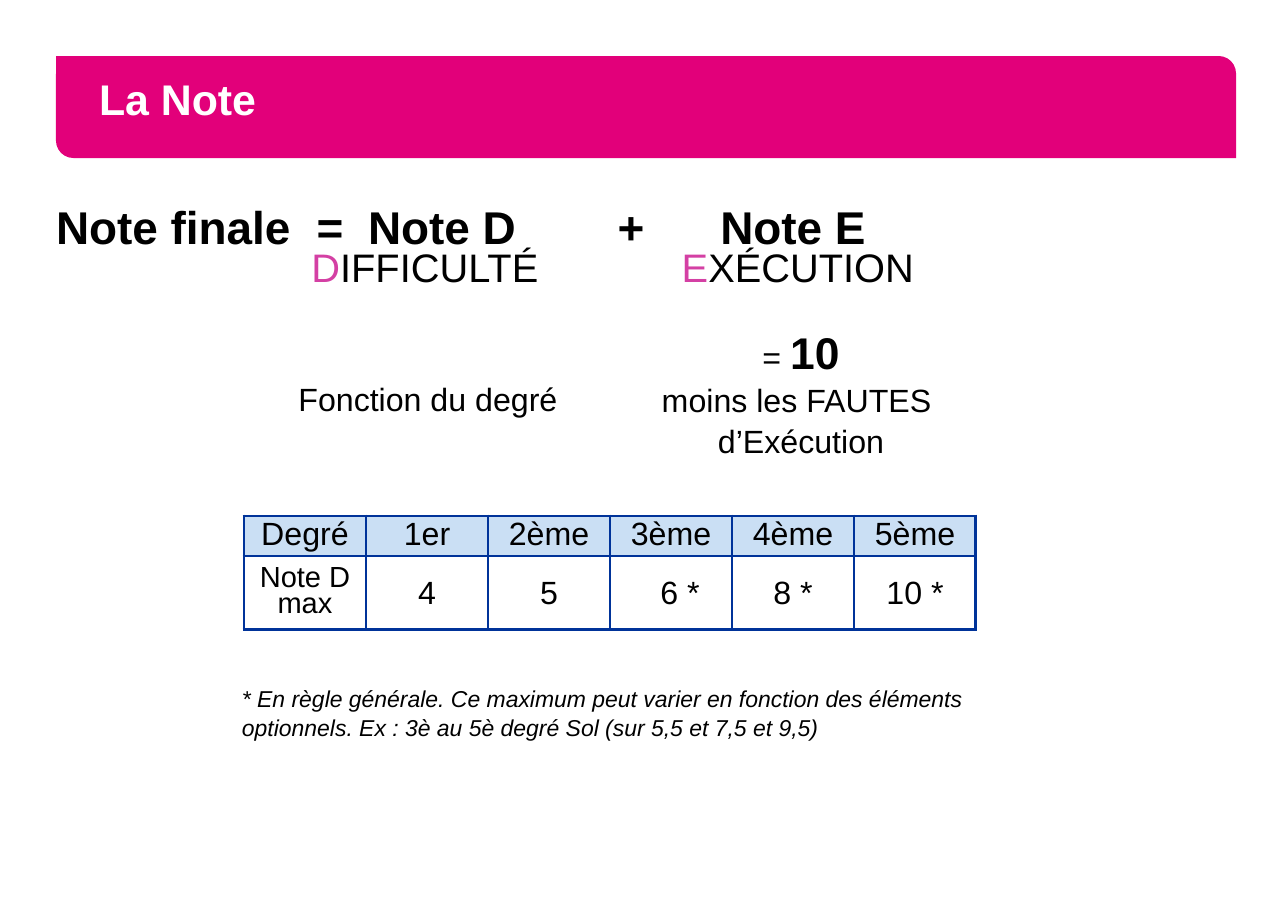
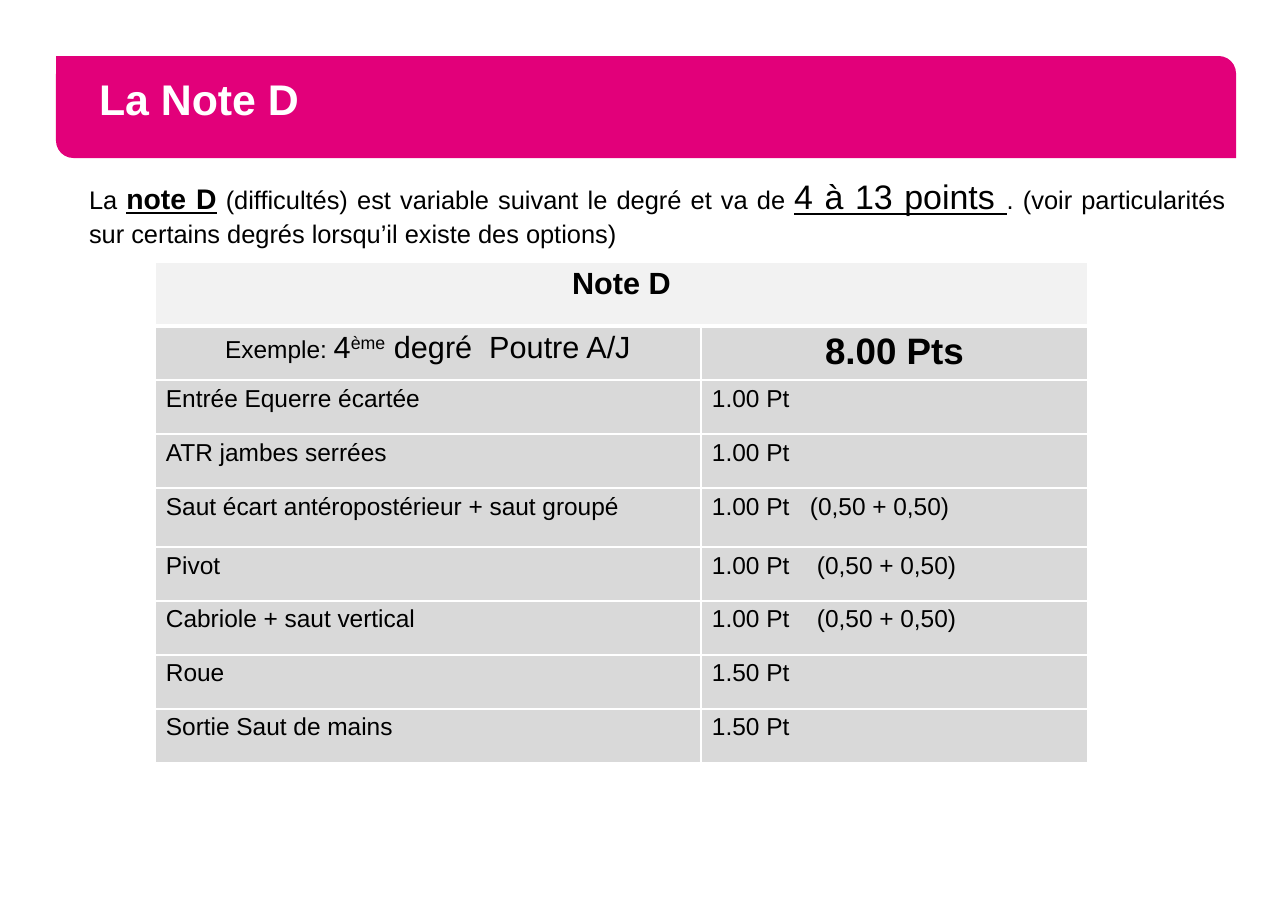
from typing import NamedTuple

from lxml import etree
from pptx import Presentation
from pptx.dml.color import RGBColor
from pptx.enum.shapes import MSO_SHAPE
from pptx.enum.text import MSO_ANCHOR, PP_ALIGN
from pptx.oxml.ns import qn
from pptx.util import Emu, Pt

# Shared style
EMU_PER_PX = 8298
FONT = "Arial"
BLACK = RGBColor(0x00, 0x00, 0x00)
WHITE = RGBColor(0xFF, 0xFF, 0xFF)
MAGENTA = RGBColor(0xE2, 0x00, 0x7A)
PINK = RGBColor(0xD4, 0x40, 0xA4)
NAVY = RGBColor(0x00, 0x33, 0x99)
PALE_BLUE = RGBColor(0xCA, 0xDF, 0xF4)
PALE_GREY = RGBColor(0xF2, 0xF2, 0xF2)
GREY = RGBColor(0xD9, 0xD9, 0xD9)
LEFT, CENTER, JUSTIFY = PP_ALIGN.LEFT, PP_ALIGN.CENTER, PP_ALIGN.JUSTIFY
BODY_SPACING = 1.05


class Span(NamedTuple):
    text: str
    size: float
    color: RGBColor = BLACK
    bold: bool = False
    italic: bool = False
    underline: bool = False
    superscript: bool = False


def px(length):
    return Emu(length * EMU_PER_PX)


def set_tabs(para, stops, align):
    tab_list = etree.SubElement(para._p.get_or_add_pPr(), qn("a:tabLst"))
    for stop in stops:
        etree.SubElement(tab_list, qn("a:tab"), pos=str(px(stop)), algn=align)


def write_paragraph(para, spans, align=LEFT, spacing=1.0):
    para.alignment = align
    para.line_spacing = spacing
    for span in spans:
        run = para.add_run()
        run.text = span.text
        font = run.font
        font.name, font.size = FONT, Pt(span.size)
        font.bold, font.italic, font.underline = span.bold, span.italic, span.underline
        font.color.rgb = span.color
        if span.superscript:
            run._r.get_or_add_rPr().set("baseline", "30000")


def set_margins(target, horizontal, vertical):
    target.margin_left = target.margin_right = px(horizontal)
    target.margin_top = target.margin_bottom = px(vertical)


def add_text(page, area, lines, align=LEFT, spacing=BODY_SPACING, margin=5, tabs=()):
    """Add a text box; tabs holds the centred tab stops of each line."""
    frame = page.shapes.add_textbox(*map(px, area)).text_frame
    frame.word_wrap = True
    set_margins(frame, margin, margin)
    for index, spans in enumerate(lines):
        para = frame.add_paragraph() if index else frame.paragraphs[0]
        if tabs:
            set_tabs(para, tabs[index], "ctr")
        write_paragraph(para, spans, align, spacing)
    return frame


def add_page(deck, title):
    """Add a blank page with the title band."""
    page = deck.slides.add_slide(deck.slide_layouts[6])
    band = page.shapes.add_shape(
        MSO_SHAPE.ROUND_2_DIAG_RECTANGLE, *map(px, (56, 56, 1180, 102)))
    band.adjustments[0], band.adjustments[1] = 0, 0.17
    band.shadow.inherit = False
    band.fill.solid()
    band.fill.fore_color.rgb = MAGENTA
    band.line.fill.background()
    frame = band.text_frame
    set_margins(frame, 38, 0)
    frame.vertical_anchor = MSO_ANCHOR.MIDDLE
    write_paragraph(frame.paragraphs[0], [Span(title, 28, WHITE, bold=True)],
                    spacing=Pt(22))
    return page


def add_grid(page, left, top, widths, heights):
    frame = page.shapes.add_table(len(heights), len(widths), px(left), px(top),
                                  px(sum(widths)), px(sum(heights)))
    table = frame.table
    table.first_row = table.horz_banding = False
    for column, width in zip(table.columns, widths):
        column.width = px(width)
    for row, height in zip(table.rows, heights):
        row.height = px(height)
    return table


def style_cell(cell, fill, color, borders):
    """Set the fill and the left, right, top and bottom border widths."""
    properties = cell._tc.get_or_add_tcPr()
    for side, width in zip("LRTB", borders):
        line = etree.SubElement(properties, qn(f"a:ln{side}"), w=str(Pt(width)))
        solid = etree.SubElement(line, qn("a:solidFill"))
        etree.SubElement(solid, qn("a:srgbClr"), val=str(color))
    if fill is None:
        cell.fill.background()
    else:
        cell.fill.solid()
        cell.fill.fore_color.rgb = fill


def add_degree_table(page):
    rows = [["Degré", "1er", "2ème", "3ème", "4ème", "5ème"],
            ["Note D max", "4", "5", "6 *", "8 *", "10 *"]]
    last = len(rows[0]) - 1
    table = add_grid(page, 244, 516, [122] * len(rows[0]), [40, 74])
    for r, texts in enumerate(rows):
        for c, text in enumerate(texts):
            cell = table.cell(r, c)
            edges = (c == 0, c == last, r == 0, r == 1)
            style_cell(cell, None if r else PALE_BLUE, NAVY,
                       [2.25 if edge else 1 for edge in edges])
            set_margins(cell, 0, 0)
            cell.vertical_anchor = MSO_ANCHOR.MIDDLE if r else MSO_ANCHOR.TOP
            is_label = r == 1 and c == 0
            write_paragraph(cell.text_frame.paragraphs[0],
                            [Span(text, 19 if is_label else 21)],
                            CENTER, 0.8 if is_label else 1.0)
    table.cell(1, 3).margin_left = px(18)


def add_example_table(page):
    # Element, value, tab stop of the detail
    elements = [
        ("Entrée Equerre écartée", "1.00 Pt", None),
        ("ATR jambes serrées", "1.00 Pt", None),
        ("Saut écart antéropostérieur + saut groupé", "1.00 Pt\t(0,50 + 0,50)", 98),
        ("Pivot", "1.00 Pt\t(0,50 + 0,50)", 105),
        ("Cabriole + saut vertical", "1.00 Pt\t(0,50 + 0,50)", 105),
        ("Roue", "1.50 Pt", None),
        ("Sortie Saut de mains", "1.50 Pt", None),
    ]
    heights = [64] + [54] * 8
    heights[4] = 59
    table = add_grid(page, 155, 262, [546, 387], heights)
    for r in range(len(heights)):
        for c in range(2):
            style_cell(table.cell(r, c), GREY if r else PALE_GREY, WHITE,
                       (1, 1, 3 if r == 1 else 1, 1 if r else 3))
            set_margins(table.cell(r, c), 11, 5)

    # Heading and total
    table.cell(0, 0).merge(table.cell(0, 1))
    headings = {
        (0, 0): [Span("Note D", 20, bold=True)],
        (1, 0): [Span("Exemple: ", 16), Span("4", 20),
                 Span("ème", 20, superscript=True),
                 Span(" degré  Poutre A/J", 20)],
        (1, 1): [Span("8.00 Pts", 24, bold=True)],
    }
    for position, spans in headings.items():
        write_paragraph(table.cell(*position).text_frame.paragraphs[0], spans, CENTER)

    # Elements
    for r, (element, value, stop) in enumerate(elements, start=2):
        for c, text in enumerate((element, value)):
            para = table.cell(r, c).text_frame.paragraphs[0]
            if c and stop:
                set_tabs(para, [stop], "l")
            write_paragraph(para, [Span(text, 16)])


def build_score_page(deck):
    page = add_page(deck, "La Note")
    # Formula
    add_text(page, (56, 217, 1180, 114), [
        [Span("Note finale\t=\tNote D\t+\tNote E", 30, bold=True)],
        [Span("\t", 26), Span("D", 26, PINK), Span("IFFICULTÉ\t", 26),
         Span("E", 26, PINK), Span("XÉCUTION", 26)],
    ], spacing=Pt(24), margin=0, tabs=[(274, 386, 575, 737), (369, 742)])
    # Explanations
    add_text(page, (651, 318, 300, 143), [
        [Span("= ", 21), Span("10", 29, bold=True)],
        [Span("moins les FAUTES ", 21)],
        [Span("d’Exécution", 21)],
    ], CENTER)
    add_text(page, (284, 372, 288, 50), [[Span("Fonction du degré", 21)]], CENTER)
    add_degree_table(page)
    # Footnote
    add_text(page, (237, 678, 747, 67), [[Span(
        "* En règle générale. Ce maximum peut varier en fonction des éléments "
        "optionnels. Ex : 3è au 5è degré Sol (sur 5,5 et 7,5 et 9,5)",
        15, italic=True)]])


def build_difficulty_page(deck):
    page = add_page(deck, "La Note D")
    intro = add_text(page, (56, 169, 1180, 78), [[
        Span("La ", 16.6),
        Span("note D", 18.5, bold=True, underline=True),
        Span(" (difficultés) est variable suivant le degré et va de ", 16.6),
        Span("4 à 13 points ", 22.2, underline=True),
        Span(". (voir particularités sur certains degrés lorsqu’il existe "
             "des options)", 16.6),
    ]], JUSTIFY)
    intro.margin_left, intro.margin_right = px(33), px(11)
    add_example_table(page)


def main():
    deck = Presentation()
    deck.slide_width, deck.slide_height = px(1288), px(911)
    build_score_page(deck)
    build_difficulty_page(deck)
    deck.save("out.pptx")


if __name__ == "__main__":
    main()
